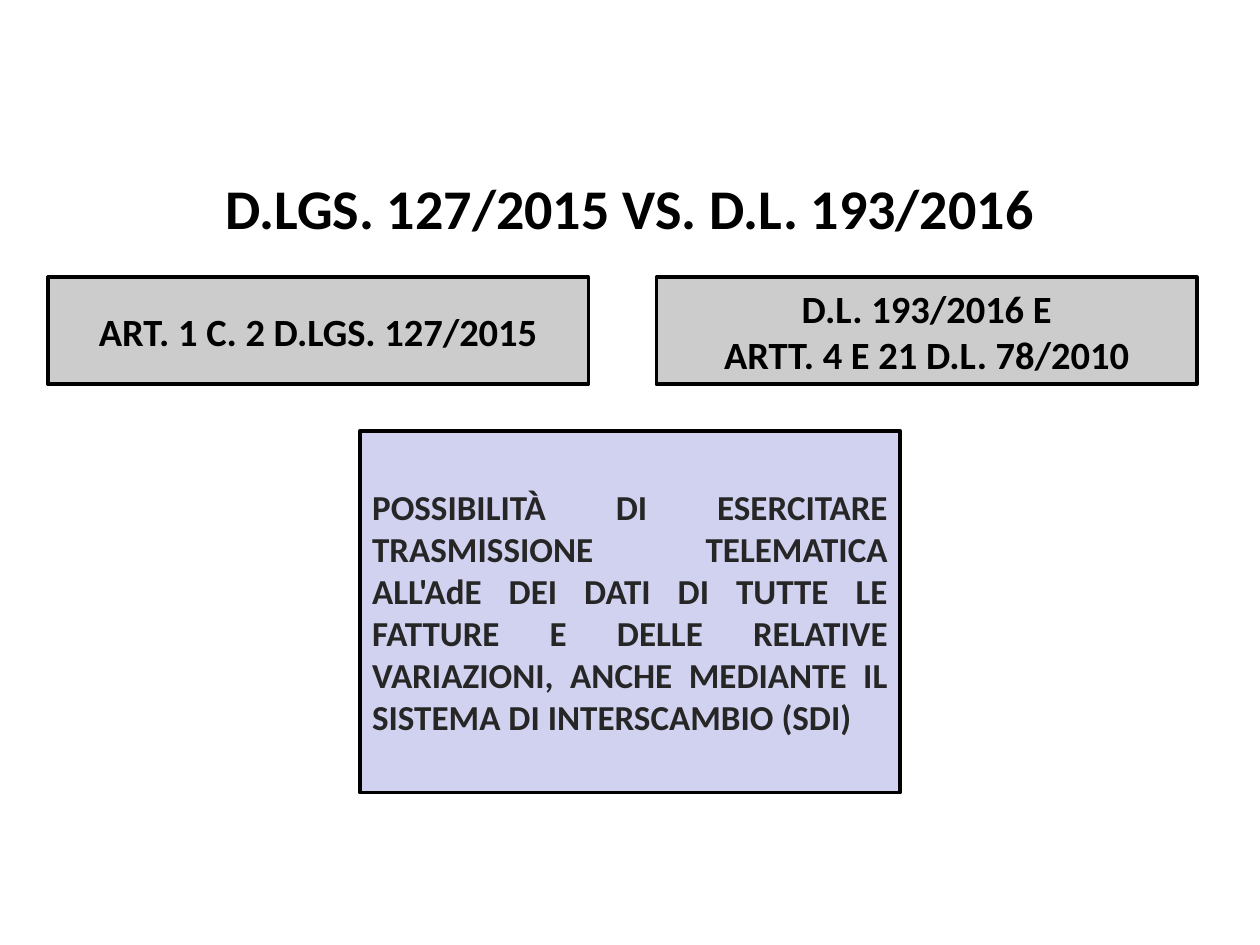
from pptx import Presentation
from pptx.dml.color import RGBColor
from pptx.enum.shapes import MSO_SHAPE
from pptx.enum.text import MSO_ANCHOR, PP_ALIGN
from pptx.util import Inches, Pt

RECTANGLE = MSO_SHAPE.RECTANGLE
MIDDLE = MSO_ANCHOR.MIDDLE
CENTER, JUSTIFY = PP_ALIGN.CENTER, PP_ALIGN.JUSTIFY

# Content
TITLE = "D.LGS. 127/2015 VS. D.L. 193/2016"
SOURCES = [
    "ART. 1 C. 2 D.LGS. 127/2015",
    "D.L. 193/2016 E\nARTT. 4 E 21 D.L. 78/2010",
]
RULE = (
    "POSSIBILITÀ DI ESERCITARE TRASMISSIONE TELEMATICA ALL'AdE DEI DATI "
    "DI TUTTE LE FATTURE E DELLE RELATIVE VARIAZIONI, ANCHE MEDIANTE IL "
    "SISTEMA DI INTERSCAMBIO (SDI)"
)

# Style
FONT = "Calibri"
COLORS = {"black": "000000", "grey": "CCCCCC", "lilac": "D1D1F0", "dark": "262626"}

# Layout in inches
WIDTH, HEIGHT = 10, 7.5
BOX_WIDTH = 4.29
LEFT_MARGIN, GAP = 0.38, 0.54
TITLE_TOP, TITLE_HEIGHT = 1.34, 0.6
SOURCE_TOP, SOURCE_HEIGHT = 2.2, 0.85
RULE_TOP, RULE_HEIGHT = 3.42, 2.87


def color(name):
    return RGBColor.from_string(COLORS[name])


def write(shape, text, size, ink="black", alignment=CENTER):
    text_frame = shape.text_frame
    text_frame.word_wrap = True
    text_frame.vertical_anchor = MIDDLE
    text_frame.text = text
    for paragraph in text_frame.paragraphs:
        paragraph.alignment = alignment
        for run in paragraph.runs:
            run.font.name = FONT
            run.font.size = Pt(size)
            run.font.bold = True
            run.font.color.rgb = color(ink)


def add_box(slide, left, top, height, fill):
    shape = slide.shapes.add_shape(
        RECTANGLE, Inches(left), Inches(top), Inches(BOX_WIDTH), Inches(height))
    shape.shadow.inherit = False
    shape.fill.solid()
    shape.fill.fore_color.rgb = color(fill)
    shape.line.color.rgb = color("black")
    shape.line.width = Pt(2)
    return shape


def main():
    presentation = Presentation()
    presentation.slide_width = Inches(WIDTH)
    presentation.slide_height = Inches(HEIGHT)
    slide = presentation.slides.add_slide(presentation.slide_layouts[6])

    # Title across the slide
    title = slide.shapes.add_textbox(
        0, Inches(TITLE_TOP), Inches(WIDTH), Inches(TITLE_HEIGHT))
    write(title, TITLE, 32)

    # Two legal sources side by side
    for column, source in enumerate(SOURCES):
        left = LEFT_MARGIN + column * (BOX_WIDTH + GAP)
        write(add_box(slide, left, SOURCE_TOP, SOURCE_HEIGHT, "grey"), source, 22)

    # Shared rule, centred below
    rule = add_box(slide, (WIDTH - BOX_WIDTH) / 2, RULE_TOP, RULE_HEIGHT, "lilac")
    write(rule, RULE, 20, "dark", JUSTIFY)

    presentation.save("out.pptx")


if __name__ == "__main__":
    main()
